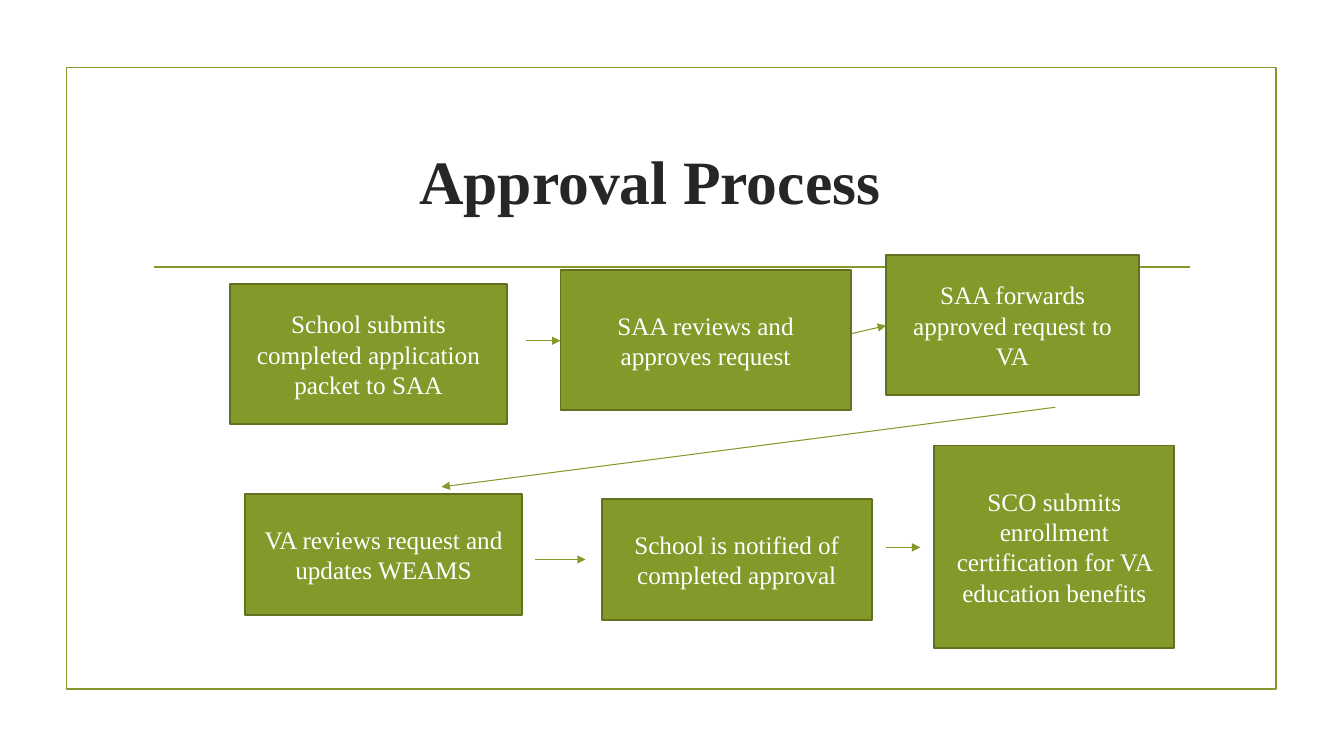
from lxml.etree import SubElement
from pptx import Presentation
from pptx.dml.color import RGBColor
from pptx.enum.shapes import MSO_CONNECTOR, MSO_SHAPE
from pptx.enum.text import MSO_ANCHOR as ANCHOR, PP_ALIGN as ALIGN
from pptx.oxml.ns import qn
from pptx.util import Pt

FONT = "Times New Roman"
GREEN = RGBColor(0x83, 0x99, 0x2A)
DARK_GREEN = RGBColor(0x61, 0x71, 0x1F)
INK = RGBColor(0x26, 0x26, 0x26)
WHITE = RGBColor(0xFF, 0xFF, 0xFF)

# Each step: left, top, width, height, text
STEPS = [
    (164.2, 203, 198, 100, "School submits completed application packet to SAA"),
    (400.3, 193, 207.4, 100, "SAA reviews and approves request"),
    (632.9, 182.2, 180.7, 100, "SAA forwards approved request to VA"),
    (175, 352.8, 198, 86.4, "VA reviews request and updates WEAMS"),
    (429.8, 356.4, 193, 86.4, "School is notified of completed approval"),
    (667.4, 318.2, 171.4, 144.7,
     "SCO submits enrollment certification for VA education benefits"),
]

# Each arrow: start x, start y, end x, end y
ARROWS = [
    (375.8, 243.4, 400.3, 243.4),
    (608.4, 238.3, 632.9, 232.6),
    (382.3, 399.6, 418.3, 399.6),
    (632.9, 391, 657.4, 391),
    (753.8, 290.9, 315.4, 347.8),
]


def write(shape, text, size, color, bold=False):
    tf = shape.text_frame
    tf.word_wrap = True
    tf.vertical_anchor = ANCHOR.MIDDLE
    p = tf.paragraphs[0]
    p.alignment = ALIGN.CENTER
    r = p.add_run()
    r.text = text
    r.font.name = FONT
    r.font.size = Pt(size)
    r.font.bold = bold
    r.font.color.rgb = color


def add_box(s, left, top, width, height, line_color, fill=None):
    box = s.shapes.add_shape(MSO_SHAPE.RECTANGLE, Pt(left), Pt(top),
                             Pt(width), Pt(height))
    box.shadow.inherit = False
    if fill is None:
        box.fill.background()
    else:
        box.fill.solid()
        box.fill.fore_color.rgb = fill
    box.line.color.rgb = line_color
    box.line.width = Pt(1.25)
    return box


def add_line(s, x1, y1, x2, y2, width, arrow=False):
    line = s.shapes.add_connector(MSO_CONNECTOR.STRAIGHT, Pt(x1), Pt(y1),
                                  Pt(x2), Pt(y2))
    line.line.color.rgb = GREEN
    line.line.width = Pt(width)
    if arrow:
        SubElement(line.line._get_or_add_ln(), qn("a:tailEnd"), type="triangle")
    SubElement(line._element.spPr, qn("a:effectLst"))


def add_title(s, text):
    title = s.shapes.title
    title.left, title.top = Pt(102.2), Pt(77)
    title.width, title.height = Pt(756), Pt(103)
    # The wider right margin sets the heading slightly left of centre
    title.text_frame.margin_right = Pt(39)
    write(title, text, 44, INK, bold=True)


def main():
    prs = Presentation()
    prs.slide_width, prs.slide_height = Pt(960), Pt(540)
    s = prs.slides.add_slide(prs.slide_layouts[5])

    # Frame, rule and title
    add_box(s, 47.5, 48.2, 864, 444.2, GREEN)
    add_line(s, 110.2, 190.8, 850.3, 190.8, 1.25)
    add_title(s, "Approval Process")

    # Process steps
    for *place, text in STEPS:
        write(add_box(s, *place, DARK_GREEN, GREEN), text, 18, WHITE)

    # Arrows between the steps
    for ends in ARROWS:
        add_line(s, *ends, 0.75, arrow=True)

    prs.save("out.pptx")


if __name__ == "__main__":
    main()
